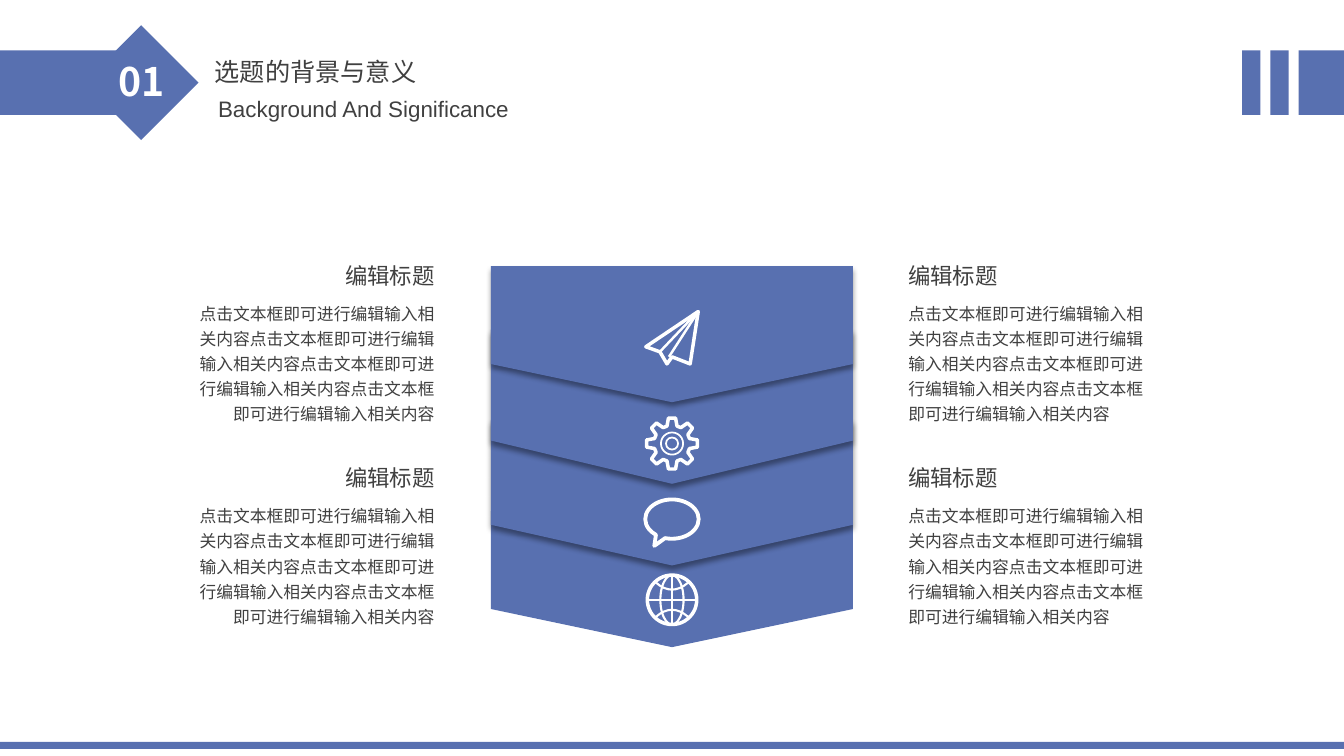
from math import cos, radians, sin

from lxml.etree import SubElement
from pptx import Presentation
from pptx.dml.color import RGBColor
from pptx.enum.shapes import MSO_CONNECTOR, MSO_SHAPE
from pptx.enum.text import MSO_ANCHOR, PP_ALIGN
from pptx.oxml.ns import qn
from pptx.util import Inches, Pt

BLUE, WHITE, GRAY = "5870B0", "FFFFFF", "404040"
CJK_FONT = "Noto Sans CJK SC"
HEADING = "编辑标题"
BODY = "点击文本框即可进行编辑输入相关内容" * 4


def color(value):
    return RGBColor.from_string(value)


def write(box, text, size, align=PP_ALIGN.LEFT, ink=GRAY, font=CJK_FONT,
          bold=False, spacing=1.0, wrap=True):
    frame = box.text_frame
    frame.word_wrap = wrap
    frame.vertical_anchor = MSO_ANCHOR.TOP
    frame.margin_left = frame.margin_right = Inches(0.1)
    frame.margin_top = frame.margin_bottom = Inches(0.05)
    para = frame.paragraphs[0]
    para.text = text
    para.alignment = align
    para.line_spacing = spacing
    para.font.name = font
    para.font.size = Pt(size)
    para.font.bold = bold
    para.font.color.rgb = color(ink)
    SubElement(para.font._element, qn("a:ea"), typeface=font)


def add_text(page, left, top, width, height, text, size, **style):
    box = page.shapes.add_textbox(Inches(left), Inches(top), Inches(width), Inches(height))
    write(box, text, size, **style)


def add_solid(page, kind, left, top, width, height):
    shape = page.shapes.add_shape(kind, Inches(left), Inches(top), Inches(width), Inches(height))
    shape.shadow.inherit = False
    shape.fill.solid()
    shape.fill.fore_color.rgb = color(BLUE)
    shape.line.fill.background()
    return shape


def outline(shape, weight):
    shape.shadow.inherit = False
    shape.fill.background()
    shape.line.color.rgb = color(WHITE)
    shape.line.width = Pt(weight)


def add_oval(page, x, y, width, height, weight, kind=MSO_SHAPE.OVAL):
    oval = page.shapes.add_shape(kind, Inches(x - width / 2), Inches(y - height / 2),
                                 Inches(width), Inches(height))
    outline(oval, weight)
    return oval


def add_path(page, x, y, points, weight, close=True):
    places = [(Inches(x + dx), Inches(y + dy)) for dx, dy in points]
    builder = page.shapes.build_freeform(*places[0])
    builder.add_line_segments(places[1:], close=close)
    outline(builder.convert_to_shape(), weight)


def add_stroke(page, x1, y1, x2, y2, weight):
    stroke = page.shapes.add_connector(MSO_CONNECTOR.STRAIGHT, Inches(x1), Inches(y1),
                                       Inches(x2), Inches(y2))
    stroke.line.color.rgb = color(WHITE)
    stroke.line.width = Pt(weight)
    SubElement(stroke._element.spPr, qn("a:effectLst"))


def draw_plane(page, x, y):
    nose = (0.26, -0.26)
    folds = [(-0.12, 0.14), (-0.03, 0.19)]
    add_path(page, x, y, [(-0.26, 0.09), nose, (0.18, 0.26), (0, 0.19),
                          (-0.05, 0.26), folds[0]], 2.5)
    for dx, dy in folds:
        add_stroke(page, x + nose[0], y + nose[1], x + dx, y + dy, 1.75)


def draw_gear(page, x, y):
    corners = [(0.18, -16), (0.255, -8), (0.255, 8), (0.18, 16)]
    points = [(radius * cos(radians(tooth + turn)), radius * sin(radians(tooth + turn)))
              for tooth in range(0, 360, 45) for radius, turn in corners]
    add_path(page, x, y, points, 2.5)
    for size in (0.22, 0.12):
        add_oval(page, x, y, size, size, 1.25)


def draw_bubble(page, x, y):
    bubble = add_oval(page, x, y - 0.03, 0.53, 0.39, 2.75, MSO_SHAPE.OVAL_CALLOUT)
    bubble.adjustments[0] = -0.33
    bubble.adjustments[1] = 0.68


def draw_globe(page, x, y):
    add_oval(page, x, y, 0.49, 0.49, 2.5)
    add_oval(page, x, y, 0.23, 0.49, 1.5)
    add_stroke(page, x - 0.25, y, x + 0.25, y, 1.5)
    add_stroke(page, x, y - 0.25, x, y + 0.25, 1.5)
    for side in (-1, 1):
        arc = [(step * 0.04, side * (0.1 + 0.07 * (step / 4) ** 2)) for step in range(-4, 5)]
        add_path(page, x, y, arc, 1.5, close=False)


def add_shadow(shape):
    effects = shape._element.spPr.find(qn("a:effectLst"))
    shadow = SubElement(effects, qn("a:outerShdw"), blurRad=str(Pt(4)), dist=str(Pt(3)),
                        dir="5400000", algn="t", rotWithShape="0")
    black = SubElement(shadow, qn("a:srgbClr"), val="000000")
    SubElement(black, qn("a:alpha"), val="40000")


def draw_header(page, left, top):
    add_solid(page, MSO_SHAPE.RECTANGLE, left, top + 0.25, 1.15, 0.64)
    add_solid(page, MSO_SHAPE.DIAMOND, left + 0.83, top, 1.14, 1.14)
    for bar_left, width in ((12.88, 0.45), (12.6, 0.18), (12.32, 0.18)):
        add_solid(page, MSO_SHAPE.RECTANGLE, left + bar_left, top + 0.25, width, 0.64)
    add_text(page, left + 1.04, top + 0.27, 0.72, 0.57, "01", 28,
             align=PP_ALIGN.CENTER, ink=WHITE, bold=True)
    title = page.shapes.title
    title.left, title.top = Inches(left + 2.03), Inches(top - 0.04)
    title.width, title.height = Inches(2.22), Inches(0.62)
    write(title, "选题的背景与意义", 18, spacing=2.0, wrap=False)
    add_text(page, left + 0.86, top + 0.64, 5.49, 0.37, "Background And Significance", 16,
             align=PP_ALIGN.CENTER, font="Arial")


def draw_chevrons(page, left, top, width):
    center = left + width / 2
    layers = [(1.35, 0.71, draw_plane), (1.53, 1.76, draw_gear),
              (1.44, 2.54, draw_bubble), (1.35, 3.31, draw_globe)]
    for index, (height, _, _) in reversed(list(enumerate(layers))):
        middle = top + 1.35 + index * 0.81 - height / 2
        chevron = add_solid(page, MSO_SHAPE.PENTAGON, center - height / 2,
                            middle - width / 2, height, width)
        chevron.rotation = 90
        chevron.adjustments[0] = 0.28
        if index < len(layers) - 1:
            add_shadow(chevron)
    for _, offset, draw_icon in layers:
        draw_icon(page, center, top + offset)


def draw_caption(page, left, top, align):
    add_text(page, left, top, 2.61, 0.37, HEADING, 16, align=align)
    add_text(page, left, top + 0.36, 2.61, 1.36, BODY, 12, align=align, spacing=1.25)


def main():
    deck = Presentation()
    deck.slide_width, deck.slide_height = Inches(13.33), Inches(7.5)
    page = deck.slides.add_slide(deck.slide_layouts[5])
    draw_header(page, 0, 0.25)
    add_solid(page, MSO_SHAPE.RECTANGLE, 0, 7.36, 13.33, 0.07)
    draw_chevrons(page, 4.87, 2.64, 3.59)
    for left, align in ((8.91, PP_ALIGN.LEFT), (1.8, PP_ALIGN.RIGHT)):
        for top in (2.55, 4.56):
            draw_caption(page, left, top, align)
    deck.save("out.pptx")


if __name__ == "__main__":
    main()
